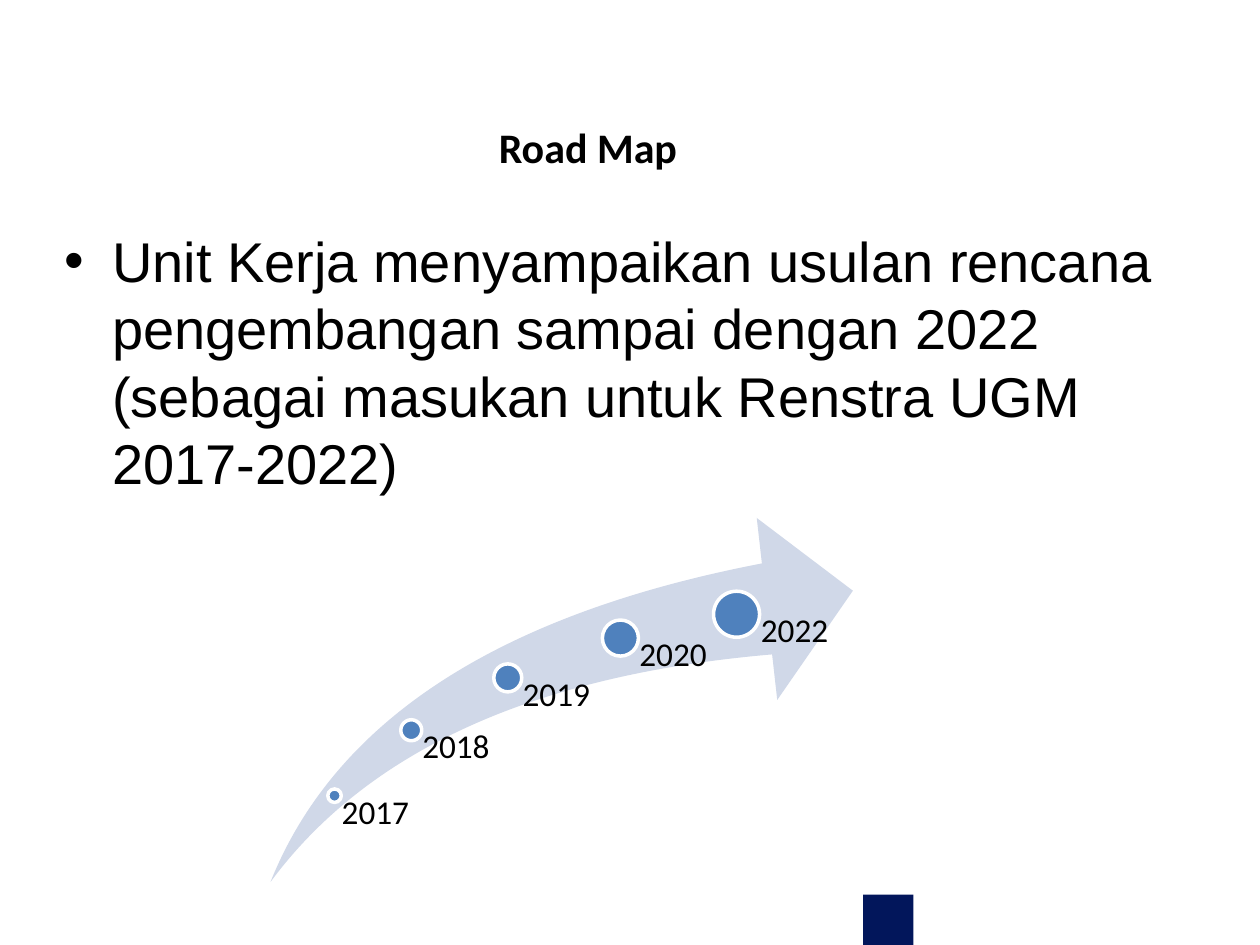
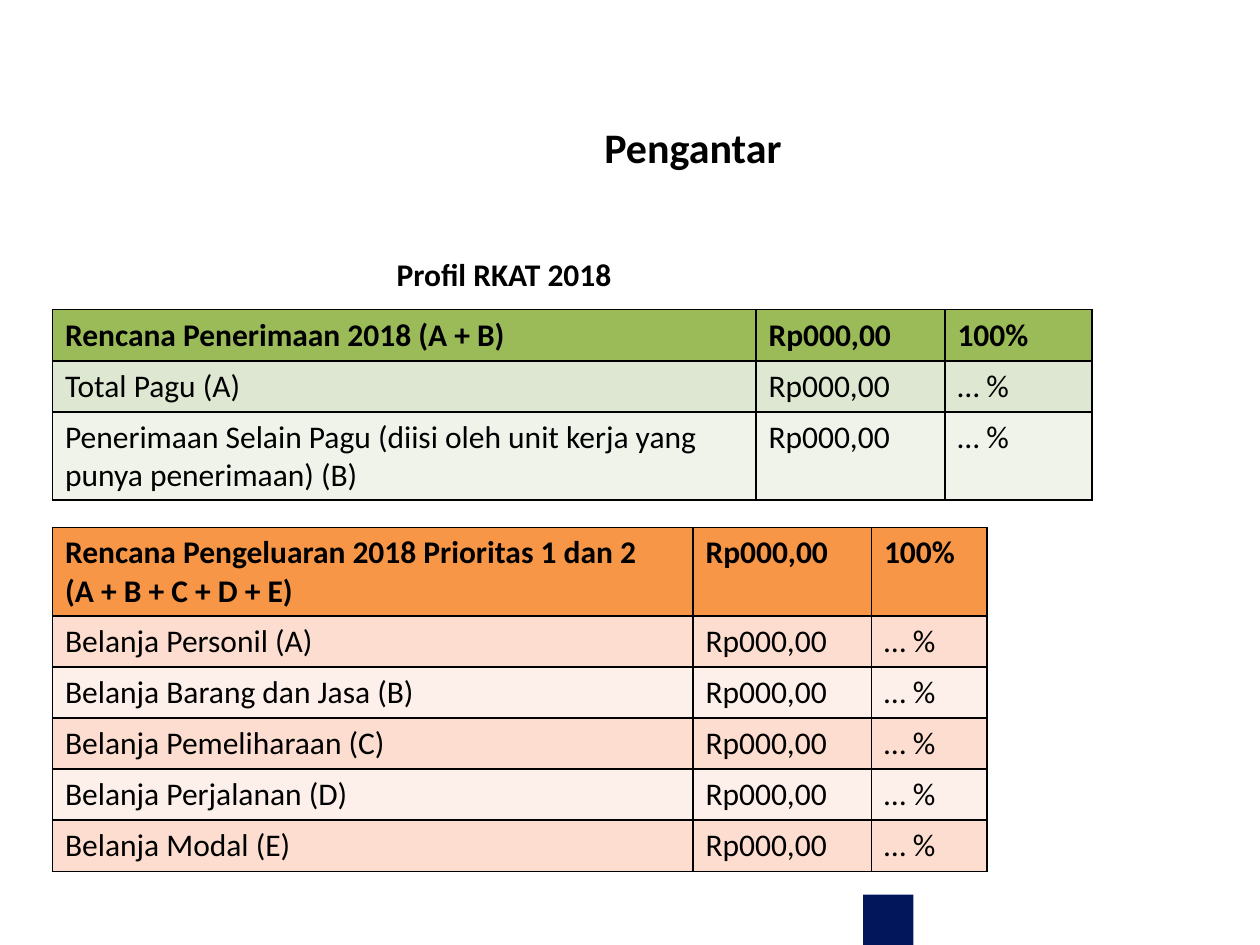
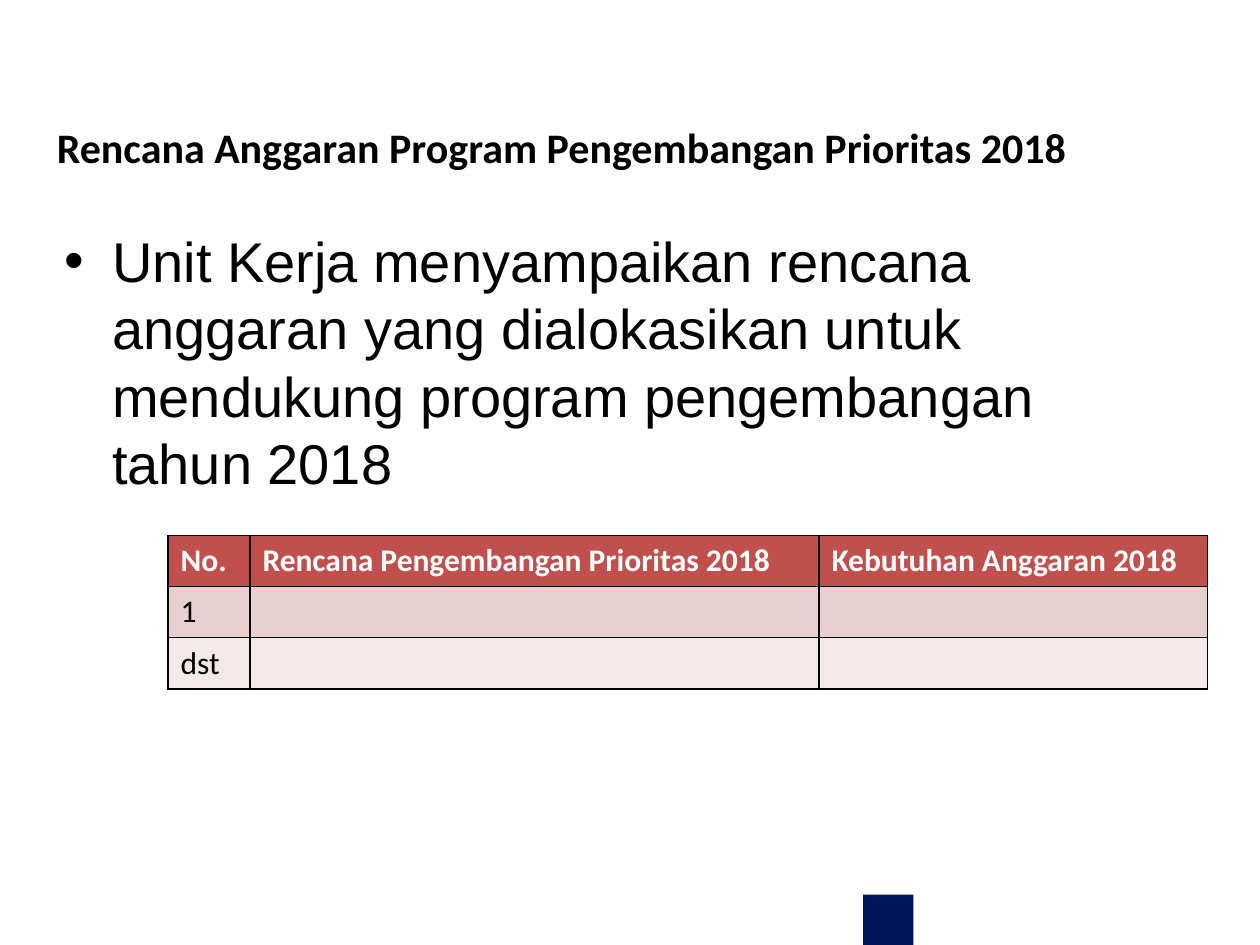
from lxml.etree import SubElement
from pptx import Presentation
from pptx.dml.color import RGBColor
from pptx.enum.shapes import MSO_SHAPE
from pptx.enum.text import PP_ALIGN
from pptx.oxml.ns import qn
from pptx.util import Pt

BLACK = RGBColor(0x00, 0x00, 0x00)
WHITE = RGBColor(0xFF, 0xFF, 0xFF)
NAVY = RGBColor(0x02, 0x16, 0x5B)
BLUE = RGBColor(0x4F, 0x81, 0xBD)
PALE_BLUE = RGBColor(0xD0, 0xD8, 0xE8)

# Table palettes: header, odd rows, even rows
GREENS = RGBColor(0x9B, 0xBB, 0x59), RGBColor(0xDE, 0xE7, 0xD1), RGBColor(0xEF, 0xF3, 0xEA)
ORANGES = RGBColor(0xF7, 0x96, 0x46), RGBColor(0xFC, 0xDD, 0xCF), RGBColor(0xFD, 0xEF, 0xE9)
REDS = RGBColor(0xC0, 0x50, 0x4D), RGBColor(0xE8, 0xD0, 0xD0), RGBColor(0xF4, 0xE9, 0xE9)

HEADING_FONT = "Calibri"
BODY_FONT = "Arial"
LINE_ROW, TWO_LINE_ROW = 29.2, 50.2
AMOUNT, SHARE = "Rp000,00", "… %"


class Deck:
    def __init__(self):
        self.presentation = Presentation()
        self.presentation.slide_width = Pt(720)
        self.presentation.slide_height = Pt(540)
        self.slide = None

    def new_slide(self, title, title_left):
        """Start a slide with its title, centred between title_left and the shared right edge."""
        self.slide = self.presentation.slides.add_slide(self.presentation.slide_layouts[6])
        self.shape(MSO_SHAPE.RECTANGLE, 493.2, 511.2, 28.8, 28.8, NAVY)
        self.heading(title, title_left, 66.2, 630 - title_left, 36.4, 24)

    def shape(self, preset, left, top, width, height, fill, outline=None):
        shape = self.slide.shapes.add_shape(preset, Pt(left), Pt(top), Pt(width), Pt(height))
        shape.shadow.inherit = False
        shape.fill.solid()
        shape.fill.fore_color.rgb = fill
        if outline is None:
            shape.line.fill.background()
        else:
            shape.line.color.rgb = outline
            shape.line.width = Pt(2)
        return shape

    def text(self, words, left, top, width, height):
        box = self.slide.shapes.add_textbox(Pt(left), Pt(top), Pt(width), Pt(height))
        box.text_frame.word_wrap = True
        box.text_frame.text = words
        return box.text_frame

    def style(self, frame, size, font=HEADING_FONT, color=BLACK, bold=False):
        for paragraph in frame.paragraphs:
            for run in paragraph.runs:
                run.font.name = font
                run.font.size = Pt(size)
                run.font.bold = bold
                run.font.color.rgb = color

    def heading(self, words, left, top, width, height, size):
        frame = self.text(words, left, top, width, height)
        frame.paragraphs[0].alignment = PP_ALIGN.CENTER
        self.style(frame, size, bold=True)

    def bullet(self, words):
        frame = self.text(words, 30, 126, 648, 326)
        properties = frame.paragraphs[0]._p.get_or_add_pPr()
        properties.set("marL", str(Pt(27)))
        properties.set("indent", str(Pt(-27)))
        SubElement(properties, qn("a:buFont"), typeface=BODY_FONT)
        SubElement(properties, qn("a:buChar"), char="•")
        self.style(frame, 32, BODY_FONT)

    def milestone(self, year, x, y, size, label_width):
        """Draw a dot centred on x, y, with its year hanging below right of the centre."""
        self.shape(MSO_SHAPE.OVAL, x - size / 2, y - size / 2, size, size, BLUE, WHITE)
        frame = self.text(year, x, y, label_width, 504 - y)
        frame.margin_left = Pt(size * 0.53)
        frame.margin_top = frame.margin_right = frame.margin_bottom = 0
        frame.paragraphs[0].line_spacing = 0.9
        self.style(frame, 19)

    def table(self, rows, left, top, widths, heights, palette, header_color=BLACK):
        header_fill, *bands = palette
        table = self.slide.shapes.add_table(
            len(rows), len(widths), Pt(left), Pt(top), Pt(sum(widths)), Pt(sum(heights))).table
        for column, width in zip(table.columns, widths):
            column.width = Pt(width)
        for index, (row, values, height) in enumerate(zip(table.rows, rows, heights)):
            row.height = Pt(height)
            is_header = index == 0
            fill = header_fill if is_header else bands[(index - 1) % 2]
            for cell, value in zip(row.cells, values):
                self.border(cell)
                cell.fill.solid()
                cell.fill.fore_color.rgb = fill
                cell.text_frame.text = value
                self.style(cell.text_frame, 18, bold=is_header,
                           color=header_color if is_header else BLACK)

    def border(self, cell):
        properties = cell._tc.get_or_add_tcPr()
        for side in ("a:lnL", "a:lnR", "a:lnT", "a:lnB"):
            line = SubElement(properties, qn(side), w=str(Pt(1)))
            fill = SubElement(line, qn("a:solidFill"))
            SubElement(fill, qn("a:srgbClr"), val=str(BLACK))


def add_road_map(deck):
    deck.new_slide("Road Map", 42)
    deck.bullet("Unit Kerja menyampaikan usulan rencana pengembangan sampai dengan 2022 "
                "(sebagai masukan untuk Renstra UGM 2017-2022)")
    swoosh = deck.shape(MSO_SHAPE.SWOOSH_ARROW, 154.6, 296, 332.8, 208, PALE_BLUE)
    swoosh.adjustments[0] = swoosh.adjustments[1] = 0.25
    for milestone in (
        ("2017", 191.2, 454.7, 7.7, 44),
        ("2018", 235, 417.3, 12, 55.4),
        ("2019", 290.2, 387.4, 16, 64),
        ("2020", 354.5, 364.6, 20.6, 66.4),
        ("2022", 420.9, 351, 26.3, 66.4),
    ):
        deck.milestone(*milestone)


def add_introduction(deck):
    deck.new_slide("Pengantar", 162)
    income = ["Total Pagu (A)",
              "Penerimaan Selain Pagu (diisi oleh unit kerja yang punya penerimaan) (B)"]
    deck.table(
        [("Rencana Penerimaan 2018 (A + B)", AMOUNT, "100%")]
        + [(source, AMOUNT, SHARE) for source in income],
        30, 177, (402, 108, 84), (LINE_ROW, LINE_ROW, TWO_LINE_ROW), GREENS)
    spending = ["Personil (A)", "Barang dan Jasa (B)", "Pemeliharaan (C)",
                "Perjalanan (D)", "Modal (E)"]
    deck.table(
        [("Rencana Pengeluaran 2018 Prioritas 1 dan 2\n(A + B + C + D + E)", AMOUNT, "100%")]
        + [(f"Belanja {purpose}", AMOUNT, SHARE) for purpose in spending],
        30, 301.5, (366, 102, 66), [TWO_LINE_ROW] + [LINE_ROW] * len(spending), ORANGES)
    deck.heading("Profil RKAT 2018", 186, 142, 204, 29, 18)


def add_priority_budget(deck):
    deck.new_slide("Rencana Anggaran Program Pengembangan Prioritas 2018", 12)
    deck.bullet("Unit Kerja menyampaikan rencana anggaran yang dialokasikan untuk mendukung "
                "program pengembangan tahun 2018")
    deck.table(
        [("No.", "Rencana Pengembangan Prioritas 2018", "Kebutuhan Anggaran 2018"),
         ("1", "", ""),
         ("dst", "", "")],
        96, 306, (46.8, 325.2, 222), [LINE_ROW] * 3, REDS, WHITE)


def main():
    deck = Deck()
    add_road_map(deck)
    add_introduction(deck)
    add_priority_budget(deck)
    deck.presentation.save("out.pptx")


if __name__ == "__main__":
    main()
